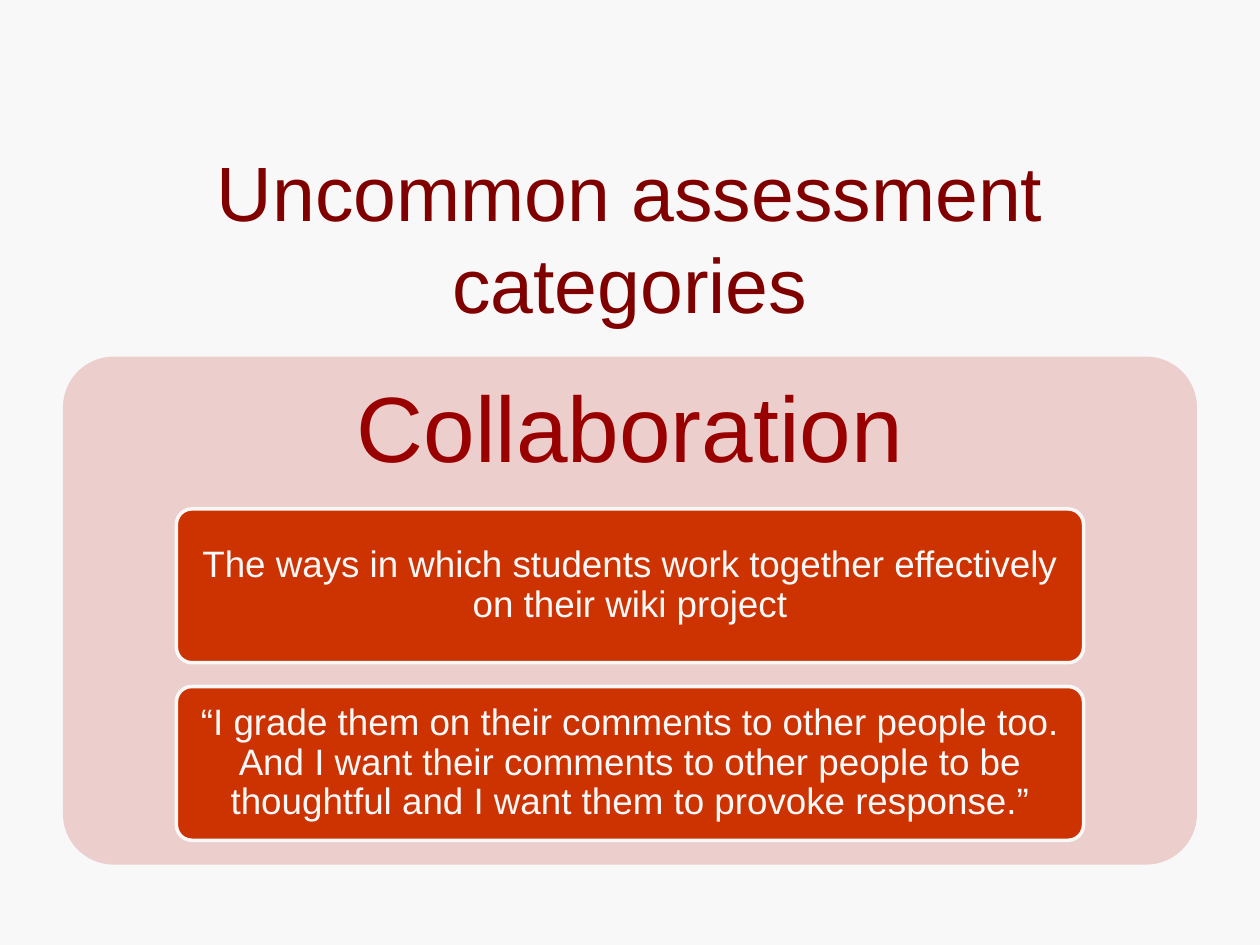
from dataclasses import dataclass

from pptx import Presentation
from pptx.dml.color import RGBColor
from pptx.enum.shapes import MSO_SHAPE
from pptx.enum.text import MSO_ANCHOR, PP_ALIGN
from pptx.util import Cm, Pt


@dataclass(frozen=True)
class Theme:
    font: str = "Arial"
    background: str = "F8F8F8"
    title: str = "800000"
    heading: str = "990000"
    panel: str = "ECCECC"
    card: str = "CC3300"
    card_text: str = "F8F8F8"
    title_size: int = 44
    heading_size: int = 53
    card_size: int = 21
    outline: int = 2


class SlideBuilder:
    def __init__(self, slide, theme):
        self.slide = slide
        self.theme = theme
        fill = slide.background.fill
        fill.solid()
        fill.fore_color.rgb = RGBColor.from_string(theme.background)

    def set_text(self, shape, text, size, color, inset, line_spacing):
        frame = shape.text_frame
        frame.word_wrap = True
        frame.vertical_anchor = MSO_ANCHOR.MIDDLE
        frame.margin_left = frame.margin_right = Cm(inset[0])
        frame.margin_top = frame.margin_bottom = Cm(inset[1])
        frame.text = text
        para = frame.paragraphs[0]
        para.alignment = PP_ALIGN.CENTER
        para.line_spacing = line_spacing
        for span in para.runs:
            span.font.name = self.theme.font
            span.font.size = Pt(size)
            span.font.color.rgb = RGBColor.from_string(color)

    def text(self, area, text, size, color, inset=(0.25, 0.13), line_spacing=1.0):
        box = self.slide.shapes.add_textbox(*map(Cm, area))
        self.set_text(box, text, size, color, inset, line_spacing)

    def panel(self, area, color):
        shape = self.slide.shapes.add_shape(MSO_SHAPE.ROUNDED_RECTANGLE, *map(Cm, area))
        shape.adjustments[0] = 0.1
        shape.shadow.inherit = False
        shape.fill.solid()
        shape.fill.fore_color.rgb = RGBColor.from_string(color)
        shape.line.fill.background()
        return shape

    def card(self, area, text):
        theme = self.theme
        shape = self.panel(area, theme.card)
        shape.line.color.rgb = RGBColor.from_string(theme.background)
        shape.line.width = Pt(theme.outline)
        self.set_text(shape, text, theme.card_size, theme.card_text, (0.15, 0.1), 0.9)


def main():
    deck = Presentation()
    deck.slide_width, deck.slide_height = Cm(25.4), Cm(19.05)
    theme = Theme()
    builder = SlideBuilder(deck.slides.add_slide(deck.slide_layouts[6]), theme)
    left, width = 1.27, 22.86

    # Title
    builder.text((left, 3.18, width, 3.18), "Uncommon assessment categories",
                 theme.title_size, theme.title)

    # Category panel with its heading
    panel_top = 7.19
    builder.panel((left, panel_top, width, 10.24), theme.panel)
    builder.text((left, panel_top, width, 3.07), "Collaboration",
                 theme.heading_size, theme.heading, (0.56, 0.56), 0.9)

    # Stacked cards, centred in the panel
    card_top, card_height, gap = 10.26, 3.1, 0.48
    card_width = 0.8 * width
    card_left = left + (width - card_width) / 2
    cards = [
        "The ways in which students work together effectively on their wiki project",
        "“I grade them on their comments to other people too. And I want their "
        "comments to other people to be thoughtful and I want them to provoke response.”",
    ]
    for index, text in enumerate(cards):
        top = card_top + index * (card_height + gap)
        builder.card((card_left, top, card_width, card_height), text)

    deck.save("out.pptx")


if __name__ == "__main__":
    main()
